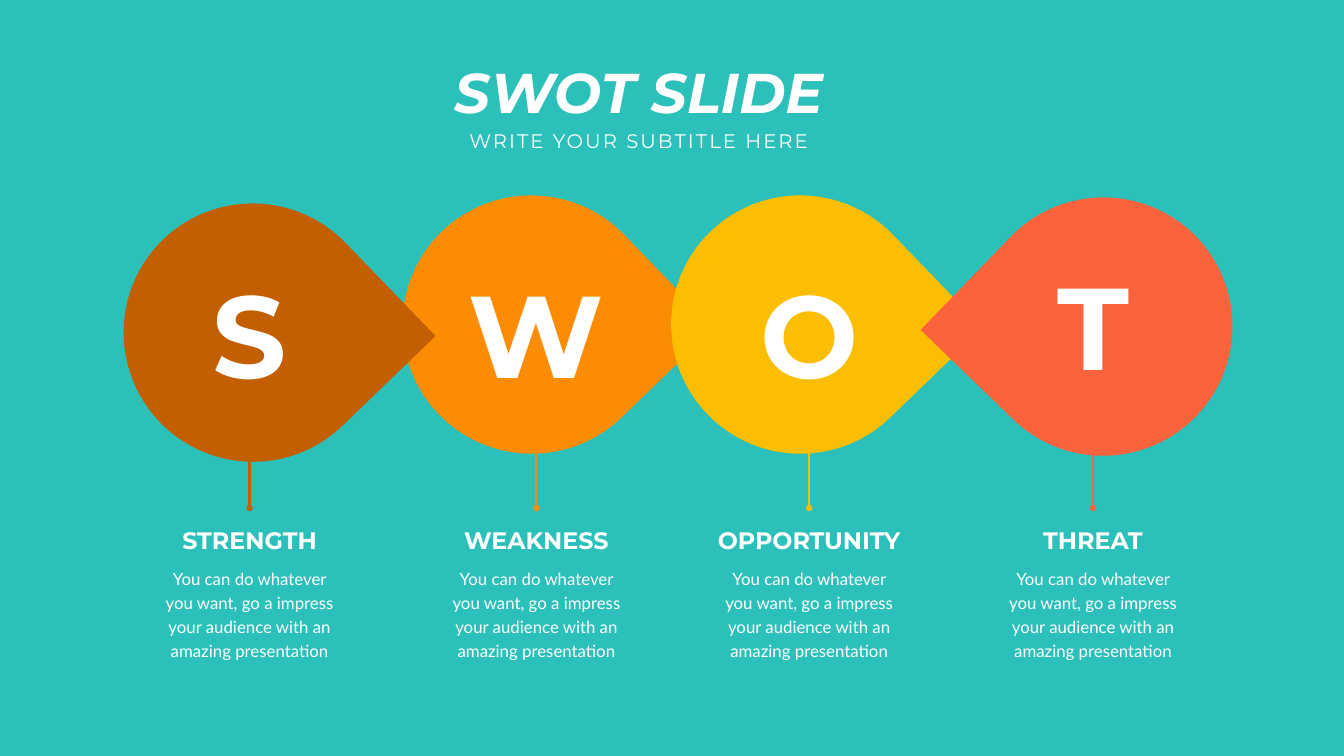
from dataclasses import dataclass

from lxml import etree
from pptx import Presentation
from pptx.dml.color import RGBColor
from pptx.enum.shapes import MSO_CONNECTOR as CONN, MSO_SHAPE as SHAPE
from pptx.enum.text import MSO_ANCHOR as ANCHOR, PP_ALIGN as ALIGN
from pptx.oxml.ns import qn
from pptx.util import Inches, Pt


@dataclass(frozen=True)
class Theme:
    heading_font: str = "Montserrat"
    body_font: str = "Lato"
    background: str = "2CC0BA"
    text: str = "FFFFFF"
    strength: str = "C35F00"
    weakness: str = "FB8C03"
    opportunity: str = "FCBE02"
    threat: str = "FA633C"
    letter_size: int = 166
    title_size: int = 80
    subtitle_size: int = 28
    label_size: int = 34
    body_size: int = 24


@dataclass
class Factor:
    name: str
    color: str
    axis: float
    drop_left: float
    drop_top: float
    letter_top: float = 5.15
    points_left: bool = False


class SlideBuilder:
    def __init__(self, s, theme):
        self.s = s
        self.theme = theme

    def shape(self, kind, left, top, width, height, color):
        sp = self.s.shapes.add_shape(
            kind, Inches(left), Inches(top), Inches(width), Inches(height))
        sp.shadow.inherit = False
        sp.fill.solid()
        sp.fill.fore_color.rgb = RGBColor.from_string(color)
        sp.line.fill.background()
        return sp

    def drop(self, factor):
        sp = self.shape(SHAPE.TEAR, factor.drop_left, factor.drop_top,
                        5.13, 5.12, factor.color)
        sp.rotation = 46
        if factor.points_left:
            sp.rotation = 314
            sp._element.spPr.find(qn("a:xfrm")).set("flipH", "1")

    def stem(self, x, top, bottom, color):
        """Vertical line that ends in a dot."""
        line = self.s.shapes.add_connector(
            CONN.STRAIGHT, Inches(x), Inches(top), Inches(x), Inches(bottom))
        line.line.width = Pt(3)
        line.line.color.rgb = RGBColor.from_string(color)
        etree.SubElement(line.line._get_or_add_ln(), qn("a:tailEnd"), type="oval")
        etree.SubElement(line._element.spPr, qn("a:effectLst"))

    def text(self, text, center, top, width, height, size, font=None,
             bold=False, italic=False, anchor=ANCHOR.TOP, wrap=False):
        """Text box centred on a vertical axis; returns its text frame."""
        sp = self.s.shapes.add_textbox(Inches(center - width / 2), Inches(top),
                                       Inches(width), Inches(height))
        tf = sp.text_frame
        tf.text = text
        tf.word_wrap = wrap
        tf.vertical_anchor = anchor
        p = tf.paragraphs[0]
        p.alignment = ALIGN.CENTER
        f = p.runs[0].font
        f.name = font or self.theme.heading_font
        f.size = Pt(size)
        f.bold = bold
        f.italic = italic
        f.color.rgb = RGBColor.from_string(self.theme.text)
        return tf

    def body(self, text, center):
        tf = self.text(text, center, 11.08, 4.01, 2.13, self.theme.body_size,
                       self.theme.body_font, wrap=True)
        tf.paragraphs[0].line_spacing = 1.2
        tf.margin_left = tf.margin_right = Inches(0.24)
        tf.margin_top = tf.margin_bottom = Inches(0.12)


BODY = ("You can do whatever you want, go a impress your audience "
        "with an amazing presentation")


def main():
    theme = Theme()
    prs = Presentation()
    prs.slide_width, prs.slide_height = Inches(26.66), Inches(15)
    b = SlideBuilder(prs.slides.add_slide(prs.slide_layouts[6]), theme)

    strength = Factor("STRENGTH", theme.strength, 4.95, 2.45, 4.04)
    weakness = Factor("WEAKNESS", theme.weakness, 10.64, 7.98, 3.88)
    opportunity = Factor("OPPORTUNITY", theme.opportunity, 16.05, 13.31, 3.88)
    threat = Factor("THREAT", theme.threat, 21.68, 19.32, 3.92,
                    letter_top=4.99, points_left=True)
    factors = [strength, weakness, opportunity, threat]

    b.shape(SHAPE.RECTANGLE, 0, 0, 26.66, 15, theme.background)
    # The strength tip overlaps the weakness drop, so weakness goes first.
    for factor in (weakness, strength, opportunity, threat):
        b.drop(factor)

    for factor in factors:
        b.text(factor.name[0], factor.axis, factor.letter_top, 3, 2.89,
               theme.letter_size, bold=True, anchor=ANCHOR.MIDDLE)
        b.stem(factor.axis, 8.56, 10.08, factor.color)
        b.text(factor.name, factor.axis, 10.38, 4, 0.67,
               theme.label_size, bold=True, anchor=ANCHOR.MIDDLE)
        b.body(BODY, factor.axis)

    b.text("SWOT SLIDE", 12.67, 1.09, 7.71, 1.45, theme.title_size,
           bold=True, italic=True)
    subtitle = b.text("WRITE YOUR SUBTITLE HERE", 12.67, 2.51, 7.02, 0.57,
                      theme.subtitle_size)
    subtitle.paragraphs[0].runs[0]._r.get_or_add_rPr().set("spc", "300")

    prs.save("out.pptx")


if __name__ == "__main__":
    main()
